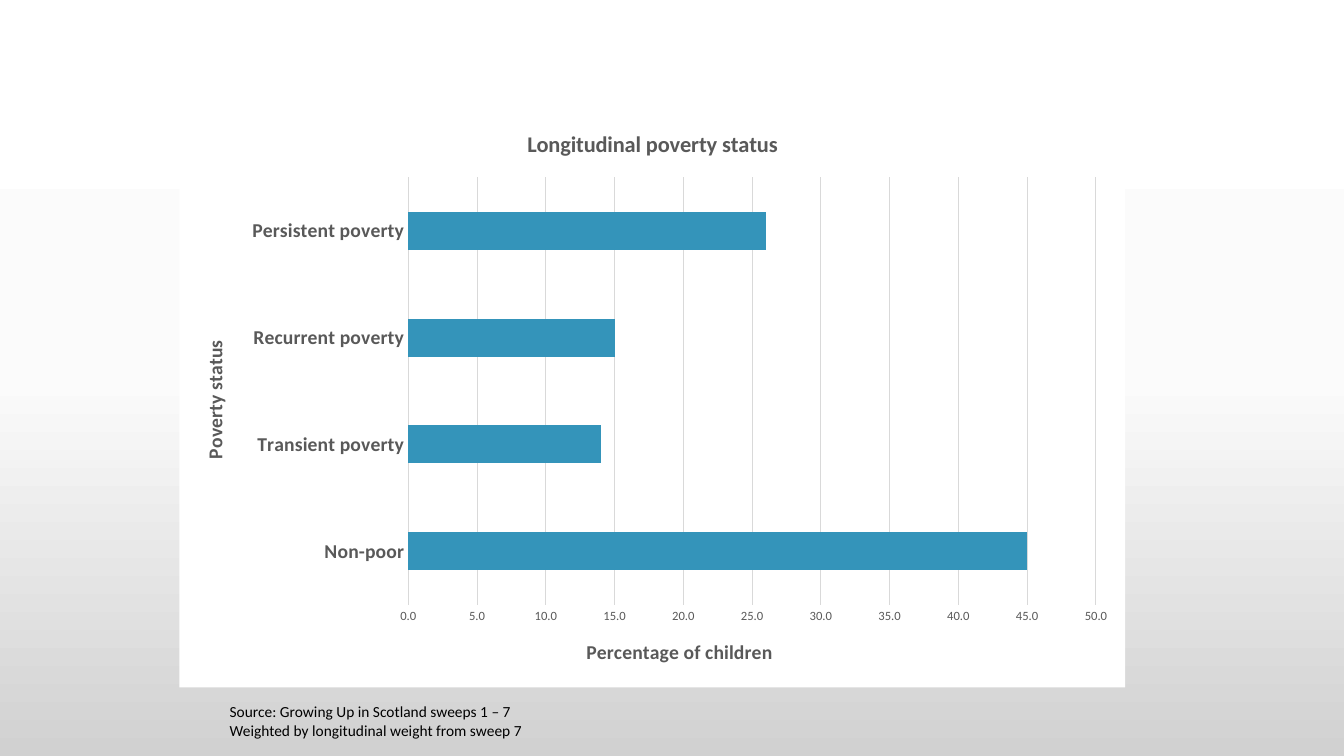
from copy import deepcopy

from pptx import Presentation
from pptx.chart.data import CategoryChartData
from pptx.dml.color import RGBColor
from pptx.enum.chart import XL_CHART_TYPE as ChartType, XL_TICK_MARK as TickMark
from pptx.oxml import parse_xml
from pptx.oxml.ns import nsdecls, qn
from pptx.util import Inches, Pt

FONT = "Calibri"
COLORS = {
    "bar": "3494BA",
    "label": "595959",
    "grid": "D9D9D9",
    "panel": "FFFFFF",
    "text": "000000",
}
BACKGROUND_STOPS = [(0, "FFFFFF"), (0.5, "FBFBFB"), (1, "D1D1D1")]
CHART_WIDTH, CHART_HEIGHT = 9.38, 5.75
POVERTY_SHARES = {
    "Non-poor": 45,
    "Transient poverty": 14,
    "Recurrent poverty": 15,
    "Persistent poverty": 26,
}
SOURCE_LINES = [
    "Source: Growing Up in Scotland sweeps 1 – 7",
    "Weighted by longitudinal weight from sweep 7",
]


def rgb(name):
    return RGBColor.from_string(COLORS[name])


def format_font(font, size, color="label", bold=False):
    font.name = FONT
    font.size = Pt(size)
    font.bold = bold
    font.color.rgb = rgb(color)


def write_text(paragraph, text, line_spacing=None, **font_format):
    run = paragraph.add_run()
    run.text = text
    paragraph.line_spacing = line_spacing
    format_font(run.font, **font_format)


def format_line(line, color):
    line.color.rgb = rgb(color)
    line.width = Pt(0.75)


def set_background(slide):
    fill = slide.background.fill
    fill.gradient()
    fill.gradient_angle = 270
    stop_list = slide.element.find(".//" + qn("a:gsLst"))
    stop_list.insert(1, deepcopy(stop_list[0]))
    for stop, (position, color) in zip(fill.gradient_stops, BACKGROUND_STOPS):
        stop.position = position
        stop.color.rgb = RGBColor.from_string(color)


def place(element, index, target=None, **lengths):
    """Place a chart part by lengths in inches from the chart's top left corner."""
    for layout in element.findall(qn("c:layout")):
        element.remove(layout)
    extents = {"x": CHART_WIDTH, "y": CHART_HEIGHT, "w": CHART_WIDTH, "h": CHART_HEIGHT}
    target_xml = f'<c:layoutTarget val="{target}"/>' if target else ""
    modes = "".join(f'<c:{key}Mode val="edge"/>' for key in "xy")
    values = "".join(f'<c:{key} val="{length / extents[key]}"/>'
                     for key, length in lengths.items())
    element.insert(index, parse_xml(
        f"<c:layout {nsdecls('c')}><c:manualLayout>{target_xml}{modes}{values}"
        "</c:manualLayout></c:layout>"))


def add_title(owner, text, size, x, y):
    """Title a chart or an axis at a fixed place."""
    owner.has_title = True
    title = owner.chart_title if hasattr(owner, "chart_title") else owner.axis_title
    write_text(title.text_frame.paragraphs[0], text, size=size, bold=True)
    title_element = title.text_frame._txBody.getparent().getparent()
    place(title_element, 1, x=x, y=y)


def fill_chart_area(chart, color):
    chart_space = chart.element
    chart_space.find(qn("c:chart")).addnext(parse_xml(
        f"<c:spPr {nsdecls('c', 'a')}><a:solidFill><a:srgbClr val=\"{COLORS[color]}\"/>"
        "</a:solidFill><a:ln><a:noFill/></a:ln></c:spPr>"))


def format_axes(chart):
    category_axis, value_axis = chart.category_axis, chart.value_axis
    for axis in (category_axis, value_axis):
        axis.major_tick_mark = axis.minor_tick_mark = TickMark.NONE
    format_font(category_axis.tick_labels.font, size=14, bold=True)
    format_line(category_axis.format.line, "grid")
    format_font(value_axis.tick_labels.font, size=9)
    value_axis.tick_labels.number_format = "0.0"
    value_axis.tick_labels.number_format_is_linked = False
    value_axis.minimum_scale, value_axis.maximum_scale = 0, 50
    value_axis.major_unit = 5
    value_axis.format.line.fill.background()
    format_line(value_axis.major_gridlines.format.line, "grid")


def add_poverty_chart(slide):
    data = CategoryChartData(number_format="0.0")
    data.categories = list(POVERTY_SHARES)
    data.add_series("Series 1", list(POVERTY_SHARES.values()))
    chart = slide.shapes.add_chart(
        ChartType.BAR_CLUSTERED, Inches(1.78), Inches(1.07),
        Inches(CHART_WIDTH), Inches(CHART_HEIGHT), data).chart
    format_font(chart.font, size=10, color="text")
    fill_chart_area(chart, "panel")
    chart.has_legend = False
    plot = chart.plots[0]
    plot.vary_by_categories = False
    plot.gap_width = 182
    bar_fill = plot.series[0].format.fill
    bar_fill.solid()
    bar_fill.fore_color.rgb = rgb("bar")
    format_axes(chart)
    add_title(chart, "Longitudinal poverty status", 16, x=3.41, y=0.17)
    add_title(chart.category_axis, "Poverty status", 14, x=0.18, y=2.27)
    add_title(chart.value_axis, "Percentage of children", 14, x=4, y=5.23)
    plot_area = chart.element.find(".//" + qn("c:plotArea"))
    place(plot_area, 0, target="inner", x=2.27, y=0.69, w=6.82, h=4.24)


def add_source_note(slide):
    frame = slide.shapes.add_textbox(
        Inches(2.18), Inches(6.9), Inches(5), Inches(0.5)).text_frame
    frame.word_wrap = True
    for index, line in enumerate(SOURCE_LINES):
        paragraph = frame.add_paragraph() if index else frame.paragraphs[0]
        write_text(paragraph, line, line_spacing=1.07, size=11, color="text")


def main():
    presentation = Presentation()
    presentation.slide_width = Inches(13.33)
    presentation.slide_height = Inches(7.5)
    slide = presentation.slides.add_slide(presentation.slide_layouts[6])
    set_background(slide)
    add_poverty_chart(slide)
    add_source_note(slide)
    presentation.save("out.pptx")


if __name__ == "__main__":
    main()
